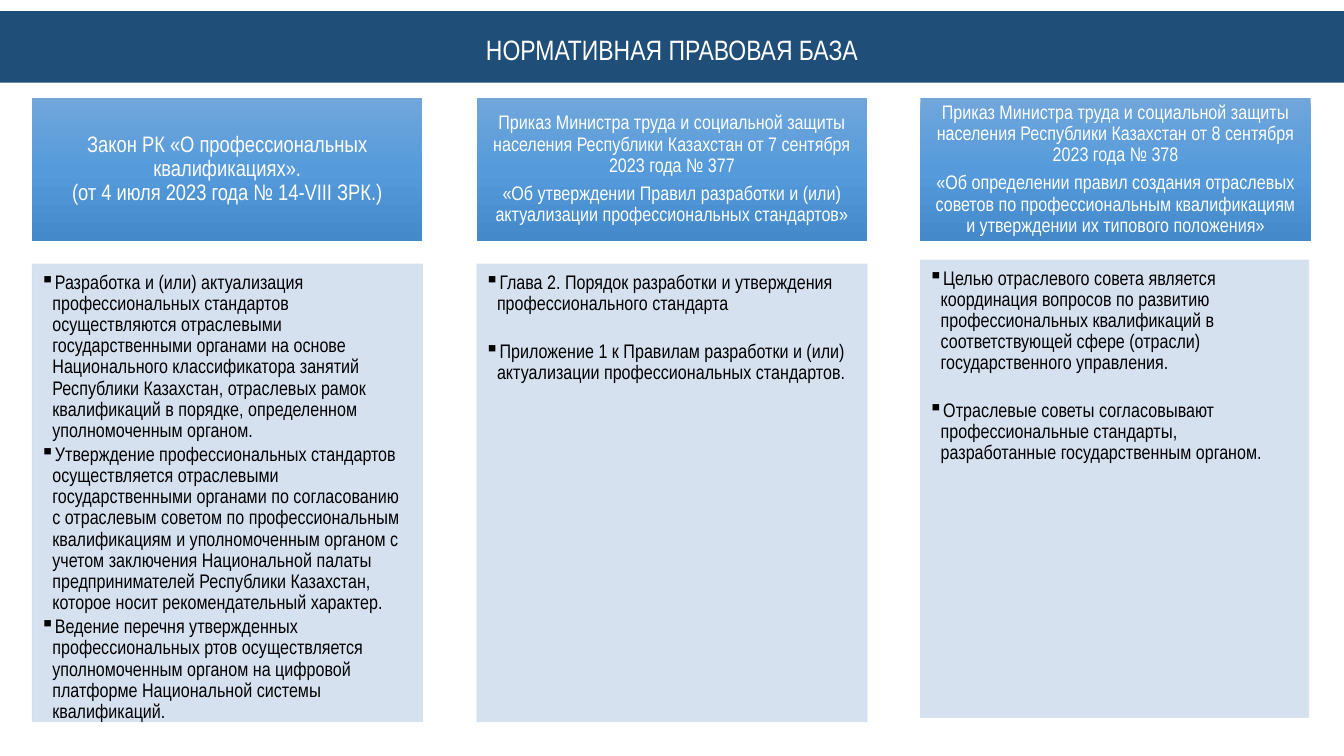
from copy import deepcopy
from dataclasses import dataclass

from lxml.etree import SubElement
from pptx import Presentation
from pptx.dml.color import RGBColor
from pptx.enum.shapes import MSO_SHAPE
from pptx.enum.text import MSO_ANCHOR as Anchor, PP_ALIGN as Align
from pptx.oxml.ns import qn
from pptx.util import Inches, Pt


@dataclass(frozen=True)
class Theme:
    font: str = "Arial Narrow"
    banner: str = "1F4E79"
    header_stops: tuple = ("71A6DB", "559BDB", "448ACA")
    body: str = "D2DEEF"
    body_opacity: int = 90
    light: str = "FFFFFF"
    dark: str = "000000"
    title_size: int = 20
    large_size: int = 16
    text_size: int = 14


@dataclass(frozen=True)
class Box:
    left: float
    top: float
    width: float
    height: float


@dataclass(frozen=True)
class Column:
    header_box: Box
    body_box: Box
    header: tuple
    points: tuple
    header_size: int
    header_insets: tuple
    point_gap: float = 0


THEME = Theme()
BODY_INSETS = (0.08, 0.08, 0.11, 0.12)
SMALL_INSETS = (0.11, 0.06, 0.11, 0.06)

COLUMNS = (
    Column(
        Box(0.32, 0.97, 3.87, 1.42),
        Box(0.32, 2.62, 3.87, 4.54),
        ("Закон РК «О профессиональных квалификациях».\n(от 4 июля 2023 года № 14-VIII ЗРК.)",),
        (
            "Разработка и (или) актуализация профессиональных стандартов осуществляются "
            "отраслевыми государственными органами на основе Национального классификатора "
            "занятий Республики Казахстан, отраслевых рамок квалификаций в порядке, "
            "определенном уполномоченным органом.",
            "Утверждение профессиональных стандартов осуществляется отраслевыми "
            "государственными органами по согласованию с отраслевым советом по "
            "профессиональным квалификациям и уполномоченным органом с учетом заключения "
            "Национальной палаты предпринимателей Республики Казахстан, которое носит "
            "рекомендательный характер.",
            "Ведение перечня утвержденных профессиональных ртов осуществляется "
            "уполномоченным органом на цифровой платформе Национальной системы квалификаций.",
        ),
        THEME.large_size,
        (0.12, 0.07, 0.12, 0.07),
    ),
    Column(
        Box(4.73, 0.97, 3.87, 1.42),
        Box(4.73, 2.62, 3.87, 4.54),
        (
            "Приказ Министра труда и социальной защиты населения Республики Казахстан "
            "от 7 сентября 2023 года № 377",
            "«Об утверждении Правил разработки и (или) актуализации "
            "профессиональных стандартов»",
        ),
        (
            "Глава 2. Порядок разработки и утверждения профессионального стандарта",
            "Приложение 1 к Правилам разработки и (или) актуализации "
            "профессиональных стандартов.",
        ),
        THEME.text_size,
        SMALL_INSETS,
        point_gap=17,
    ),
    Column(
        Box(9.13, 0.97, 3.87, 1.42),
        Box(9.13, 2.58, 3.85, 4.54),
        (
            "Приказ Министра труда и социальной защиты населения Республики Казахстан "
            "от 8 сентября 2023 года № 378",
            "«Об определении правил создания отраслевых советов по профессиональным "
            "квалификациям и утверждении их типового положения»",
        ),
        (
            "Целью отраслевого совета является координация вопросов по развитию "
            "профессиональных квалификаций в соответствующей сфере (отрасли) "
            "государственного управления.",
            "Отраслевые советы согласовывают профессиональные стандарты, "
            "разработанные государственным органом.",
        ),
        THEME.text_size,
        SMALL_INSETS,
        point_gap=17,
    ),
)


def add_panel(slide, box):
    lengths = (box.left, box.top, box.width, box.height)
    shape = slide.shapes.add_shape(MSO_SHAPE.RECTANGLE, *map(Inches, lengths))
    shape.shadow.inherit = False
    shape.line.fill.background()
    return shape


def fill_solid(fill, color, opacity=100):
    fill.solid()
    fill.fore_color.rgb = RGBColor.from_string(color)
    if opacity < 100:
        color_element = fill._xPr.find(".//" + qn("a:srgbClr"))
        SubElement(color_element, qn("a:alpha"), val=str(opacity * 1000))


def fill_gradient(shape, colors):
    """Spread the colours evenly from top to bottom."""
    shape.fill.gradient()
    shape.fill.gradient_angle = 270
    stops = shape._element.spPr.find(".//" + qn("a:gsLst"))
    while len(stops) < len(colors):
        stops.append(deepcopy(stops[0]))
    for index, (stop, color) in enumerate(zip(shape.fill.gradient_stops, colors)):
        stop.color.rgb = RGBColor.from_string(color)
        stops[index].set("pos", str(100000 * index // (len(colors) - 1)))


def add_bullet(paragraph):
    properties = paragraph._p.get_or_add_pPr()
    properties.set("lvl", "1")
    properties.set("marL", str(Inches(0.12)))
    properties.set("indent", str(-Inches(0.12)))
    SubElement(properties, qn("a:buChar"), char="▪")


def write_text(shape, texts, *, size, color, align=Align.CENTER, anchor=Anchor.MIDDLE,
               insets=(0, 0, 0, 0), line_spacing=1.0, before=0, after=0, bullets=False):
    frame = shape.text_frame
    frame.word_wrap = True
    frame.vertical_anchor = anchor
    (frame.margin_left, frame.margin_top,
     frame.margin_right, frame.margin_bottom) = map(Inches, insets)
    for index, text in enumerate(texts):
        paragraph = frame.add_paragraph() if index else frame.paragraphs[0]
        paragraph.text = text
        paragraph.alignment = align
        paragraph.line_spacing = line_spacing
        paragraph.space_before = Pt(before if index else 0)
        paragraph.space_after = Pt(after)
        if bullets:
            add_bullet(paragraph)
        for run in paragraph.runs:
            run.font.name = THEME.font
            run.font.size = Pt(size)
            run.font.color.rgb = RGBColor.from_string(color)
        for line_break in paragraph._p.findall(qn("a:br")):
            line_break.append(deepcopy(paragraph.runs[0]._r.rPr))


def add_banner(slide, box, title):
    shape = add_panel(slide, box)
    fill_solid(shape.fill, THEME.banner)
    write_text(shape, [title], size=THEME.title_size, color=THEME.light, insets=(0, 0.04, 0, 0))


def add_header(slide, column):
    shape = add_panel(slide, column.header_box)
    fill_gradient(shape, THEME.header_stops)
    write_text(shape, column.header, size=column.header_size, color=THEME.light,
               insets=column.header_insets, line_spacing=0.9, after=5)


def add_body(slide, column):
    shape = add_panel(slide, column.body_box)
    for fill in (shape.fill, shape.line.fill):
        fill_solid(fill, THEME.body, THEME.body_opacity)
    shape.line.width = Pt(0.5)
    write_text(shape, column.points, size=THEME.text_size, color=THEME.dark, align=Align.LEFT,
               anchor=Anchor.TOP, insets=BODY_INSETS, line_spacing=0.9,
               before=column.point_gap, after=2, bullets=True)


def main():
    presentation = Presentation()
    presentation.slide_width = Inches(13.33)
    presentation.slide_height = Inches(7.5)
    slide = presentation.slides.add_slide(presentation.slide_layouts[6])
    add_banner(slide, Box(0, 0.11, 13.33, 0.71), "НОРМАТИВНАЯ ПРАВОВАЯ БАЗА")
    for column in COLUMNS:
        add_header(slide, column)
        add_body(slide, column)
    presentation.save("out.pptx")


if __name__ == "__main__":
    main()
